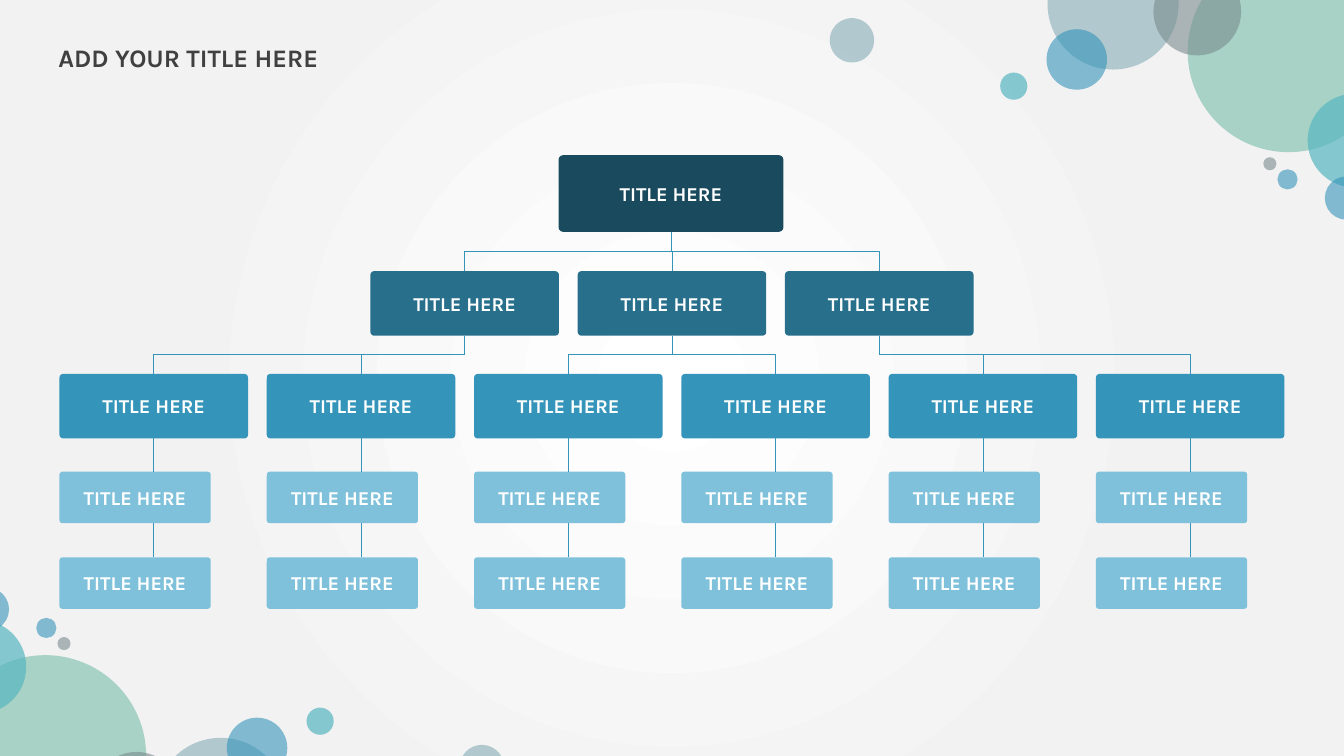
from dataclasses import dataclass

from lxml.etree import SubElement
from pptx import Presentation
from pptx.dml.color import RGBColor
from pptx.enum.shapes import MSO_CONNECTOR as Link, MSO_SHAPE as Preset
from pptx.enum.text import MSO_ANCHOR as Anchor, PP_ALIGN as Align
from pptx.oxml import parse_xml
from pptx.oxml.ns import nsdecls, qn
from pptx.shapes.connector import Connector
from pptx.slide import Slide
from pptx.text.text import Font
from pptx.util import Inches, Pt

WHITE = RGBColor(0xFF, 0xFF, 0xFF)
PALE_GRAY = RGBColor(0xF2, 0xF2, 0xF2)
CHARCOAL = RGBColor(0x40, 0x40, 0x40)
NAVY = RGBColor(0x1A, 0x4A, 0x5D)
TEAL = RGBColor(0x27, 0x6F, 0x8B)
BLUE = RGBColor(0x34, 0x94, 0xBA)
SKY = RGBColor(0x7F, 0xC1, 0xDB)
MIST = RGBColor(0x84, 0xAC, 0xB6)
GREEN = RGBColor(0x75, 0xBD, 0xA7)
GRAY = RGBColor(0x7A, 0x8C, 0x8E)
AQUA = RGBColor(0x58, 0xB6, 0xC0)

FONT = "Karla"
COLUMNS = 6
FIRST_LEFT, LAST_LEFT = 0.59, 10.87
PITCH = (LAST_LEFT - FIRST_LEFT) / (COLUMNS - 1)
# The bottom bubbles are the top ones turned half round about this point
TURN_X, TURN_Y = 6.615, 4.005


@dataclass(frozen=True)
class Bubble:
    left: float
    top: float
    size: float
    color: RGBColor
    opacity: int = 60


@dataclass(frozen=True)
class Tier:
    top: float
    width: float
    height: float
    color: RGBColor

    @property
    def bottom(self) -> float:
        return self.top + self.height


BUBBLES = [
    Bubble(10.39, -0.61, 1.3, MIST),
    Bubble(11.78, -0.49, 2, GREEN),
    Bubble(11.44, -0.32, 0.87, GRAY),
    Bubble(10.38, 0.29, 0.6, BLUE),
    Bubble(12.97, 0.93, 0.93, AQUA, 70),
    Bubble(9.92, 0.72, 0.27, AQUA, 70),
    Bubble(13.14, 1.75, 0.43, BLUE),
    Bubble(12.67, 1.68, 0.2, BLUE),
    Bubble(12.53, 1.56, 0.13, GRAY),
    Bubble(8.23, 0.18, 0.44, MIST),
]
HEAD = Tier(1.54, 2.23, 0.76, NAVY)
HEAD_LEFT = 5.54
DIVISION = Tier(2.69, 1.87, 0.64, TEAL)
TEAM = Tier(3.71, 1.87, 0.64, BLUE)
ROLES = [Tier(4.68, 1.5, 0.51, SKY), Tier(5.53, 1.5, 0.51, SKY)]
# Column position of each division, with the team columns under it
DIVISIONS = {1.5: (0, 1), 2.5: (2, 3), 3.5: (4, 5)}


def column_left(column: float) -> float:
    return FIRST_LEFT + column * PITCH


def column_center(column: float) -> float:
    return column_left(column) + TEAM.width / 2


def style_font(font: Font, size: float, color: RGBColor) -> None:
    font.name, font.size, font.bold = FONT, Pt(size), True
    font.color.rgb = color


def paint_background(slide: Slide) -> None:
    fill = slide.background.fill
    fill.gradient()
    stops = "".join(
        f'<a:gs pos="{position}"><a:srgbClr val="{color}"/></a:gs>'
        for position, color in ((0, WHITE), (67000, PALE_GRAY), (100000, PALE_GRAY))
    )
    radial = parse_xml(
        f'<a:gradFill {nsdecls("a")} rotWithShape="1"><a:gsLst>{stops}</a:gsLst>'
        '<a:path path="circle"><a:fillToRect l="50000" t="50000" r="50000" b="50000"/>'
        "</a:path></a:gradFill>"
    )
    linear = next(slide.element.iter(qn("a:gradFill")))
    linear.getparent().replace(linear, radial)


def add_bubble(slide: Slide, bubble: Bubble, turned: bool) -> None:
    left, top, size = bubble.left, bubble.top, bubble.size
    if turned:
        left, top = 2 * TURN_X - left - size, 2 * TURN_Y - top - size
    circle = slide.shapes.add_shape(
        Preset.OVAL, Inches(left), Inches(top), Inches(size), Inches(size)
    )
    circle.shadow.inherit = False
    circle.line.fill.background()
    circle.fill.solid()
    circle.fill.fore_color.rgb = bubble.color
    color = next(circle.element.spPr.iter(qn("a:srgbClr")))
    SubElement(color, qn("a:alpha")).set("val", str(bubble.opacity * 1000))


def add_card(slide: Slide, tier: Tier, left: float) -> None:
    card = slide.shapes.add_shape(
        Preset.ROUNDED_RECTANGLE,
        Inches(left), Inches(tier.top), Inches(tier.width), Inches(tier.height),
    )
    card.adjustments[0] = 0.057
    card.shadow.inherit = False
    card.line.fill.background()
    card.fill.solid()
    card.fill.fore_color.rgb = tier.color
    frame = card.text_frame
    frame.text = "TITLE HERE"
    frame.vertical_anchor = Anchor.MIDDLE
    label = frame.paragraphs[0]
    label.alignment = Align.CENTER
    style_font(label.runs[0].font, 14, WHITE)


def add_link(
    slide: Slide, kind: Link, x1: float, y1: float, x2: float, y2: float
) -> Connector:
    link = slide.shapes.add_connector(kind, Inches(x1), Inches(y1), Inches(x2), Inches(y2))
    link.line.color.rgb = BLUE
    link.line.width = Pt(0.5)
    SubElement(link.element.spPr, qn("a:effectLst"))
    return link


def add_branch(slide: Slide, x1: float, y1: float, x2: float, y2: float) -> None:
    """Elbow that leaves downwards: a sideways elbow given a quarter turn."""
    side = 1 if x2 > x1 else -1
    mid_x, mid_y = (x1 + x2) / 2, (y1 + y2) / 2
    half_drop, half_span = (y2 - y1) / 2, abs(x2 - x1) / 2
    branch = add_link(
        slide, Link.ELBOW,
        mid_x + side * half_drop, mid_y - half_span,
        mid_x - side * half_drop, mid_y + half_span,
    )
    quarter_turn = 270 if side > 0 else 90
    branch.element.spPr.find(qn("a:xfrm")).set("rot", str(quarter_turn * 60000))


def main() -> None:
    deck = Presentation()
    deck.slide_width, deck.slide_height = Inches(13.33), Inches(7.5)
    slide = deck.slides.add_slide(deck.slide_layouts[6])

    # Backdrop
    paint_background(slide)
    for turned in (False, True):
        for bubble in BUBBLES:
            add_bubble(slide, bubble, turned)

    # Heading
    heading = slide.shapes.add_textbox(Inches(0.48), Inches(0.28), Inches(3.72), Inches(0.44))
    heading.text_frame.word_wrap = True
    heading.text_frame.text = "ADD YOUR TITLE HERE"
    title = heading.text_frame.paragraphs[0]
    title.line_spacing = 1.3
    style_font(title.runs[0].font, 18, CHARCOAL)

    # Cards
    add_card(slide, HEAD, HEAD_LEFT)
    for division in DIVISIONS:
        add_card(slide, DIVISION, column_left(division))
    for column in range(COLUMNS):
        for tier in (TEAM, *ROLES):
            add_card(slide, tier, column_left(column))

    # Links
    head_center = HEAD_LEFT + HEAD.width / 2
    for division, teams in DIVISIONS.items():
        center = column_center(division)
        add_branch(slide, head_center, HEAD.bottom, center, DIVISION.top)
        for team in teams:
            add_branch(slide, center, DIVISION.bottom, column_center(team), TEAM.top)
    for column in range(COLUMNS):
        center = column_center(column)
        for upper, lower in zip((TEAM, *ROLES), ROLES):
            add_link(slide, Link.STRAIGHT, center, upper.bottom, center, lower.top)

    deck.save("out.pptx")


if __name__ == "__main__":
    main()
